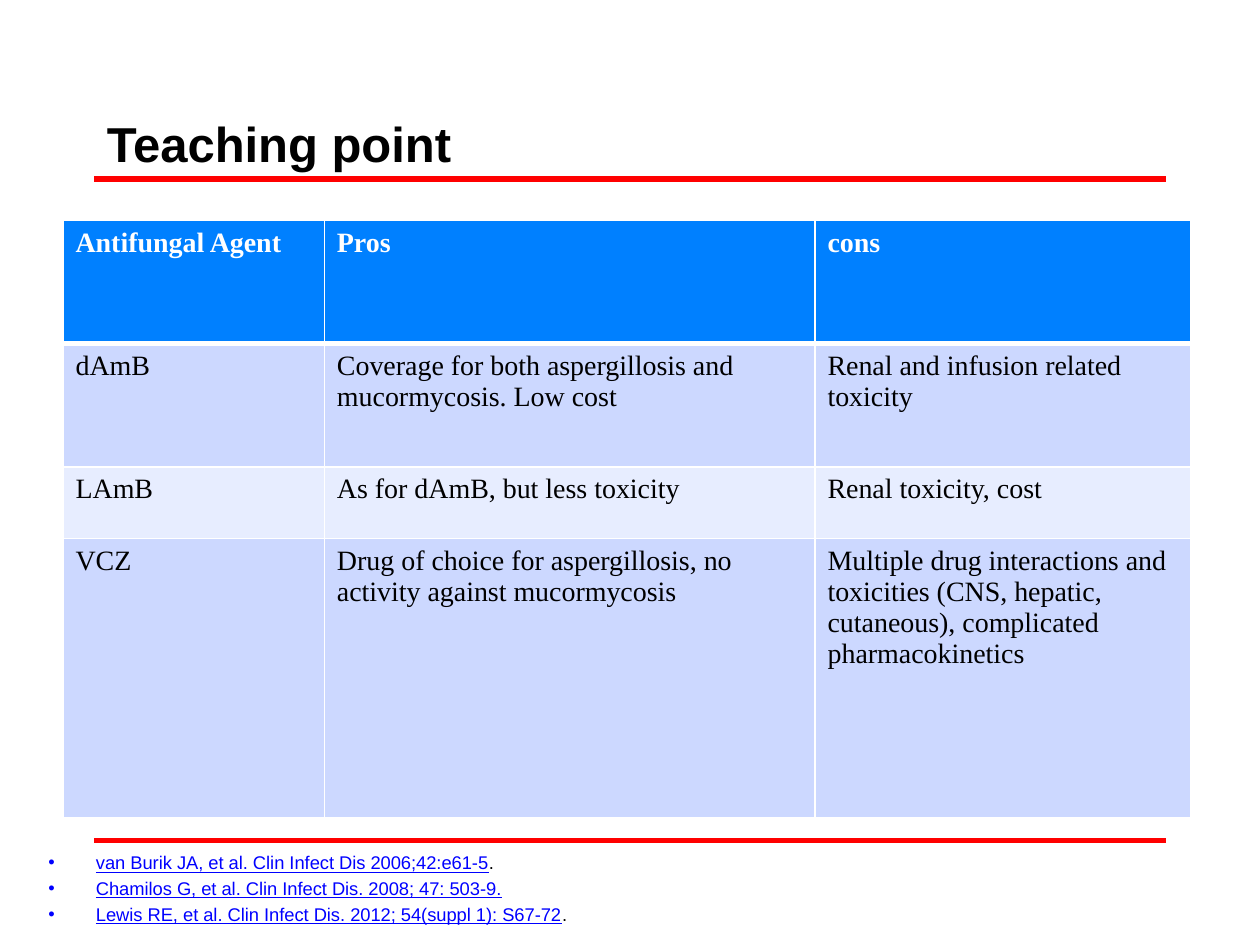
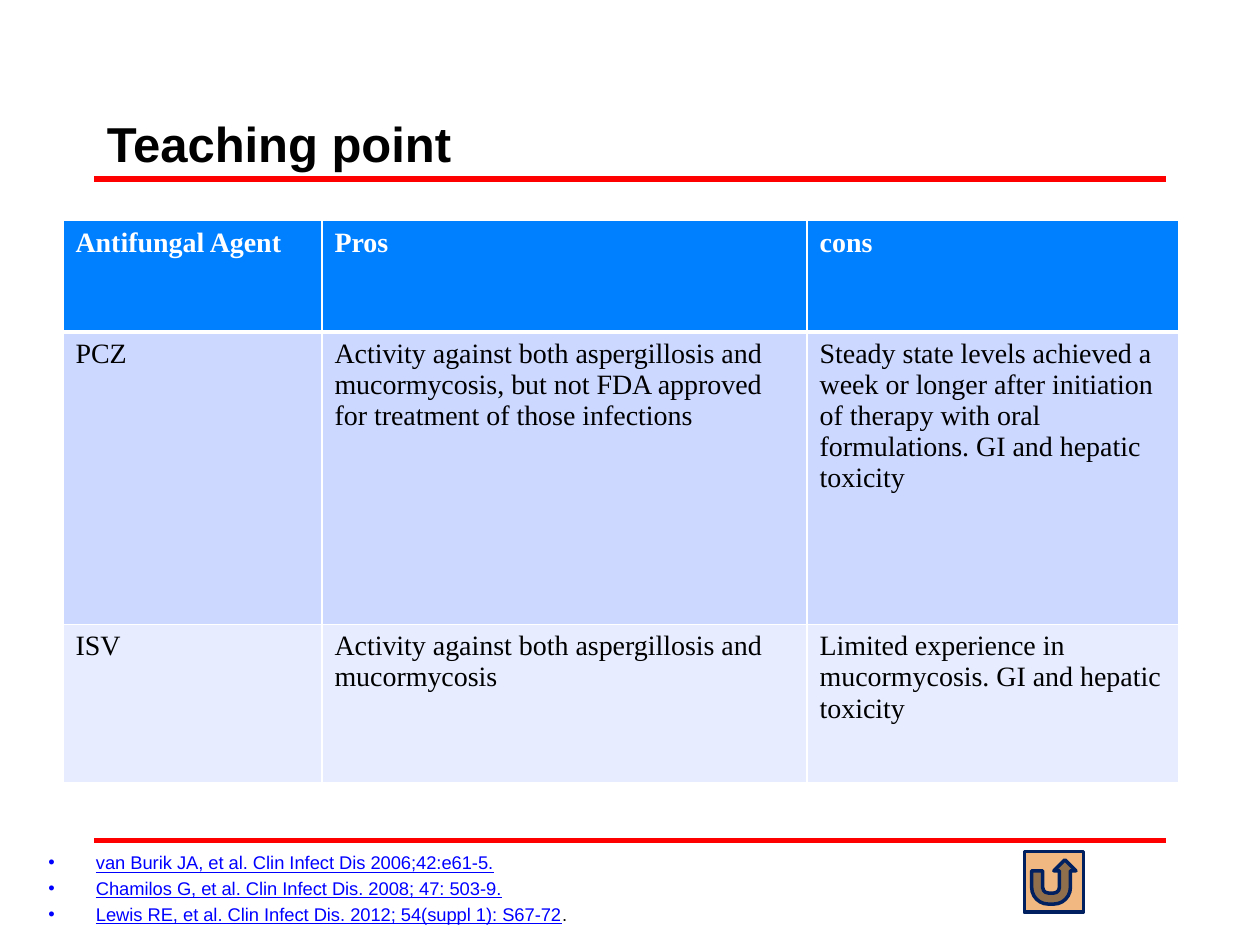
from lxml.etree import SubElement
from pptx import Presentation
from pptx.dml.color import RGBColor
from pptx.enum.shapes import MSO_CONNECTOR, MSO_SHAPE
from pptx.enum.text import MSO_ANCHOR, MSO_AUTO_SIZE, PP_ALIGN
from pptx.oxml.ns import qn
from pptx.util import Cm, Pt

# Shared look
RED, BLACK, WHITE, LINK_BLUE = "FF0000", "000000", "FFFFFF", "0000FF"
HEADER_BLUE, BANDS = "0080FF", ("CCD8FF", "E7EDFF")
HEADING_FONT, TABLE_FONT = "Arial", "Times New Roman"
RULE_LEFT, RULE_RIGHT, RULE_HEIGHTS = 1.9, 23.5, (3.61, 16.94)
TABLE_LEFT, TABLE_TOP = 1.27, 4.45
REFERENCE_INDENT = Cm(0.96)

# Content
HEADER = ("Antifungal Agent", "Pros", "cons")
FIRST_AGENTS = [
    ("dAmB", "Coverage for both aspergillosis and mucormycosis. Low cost",
     "Renal and infusion related toxicity"),
    ("LAmB", "As for dAmB, but less toxicity", "Renal toxicity, cost"),
    ("VCZ", "Drug of choice for aspergillosis, no activity against mucormycosis",
     "Multiple drug interactions and toxicities (CNS, hepatic, cutaneous), "
     "complicated pharmacokinetics"),
]
SECOND_AGENTS = [
    ("PCZ", "Activity against both aspergillosis and mucormycosis, but not FDA "
     "approved for treatment of those infections",
     "Steady state levels achieved a week or longer after initiation of therapy "
     "with oral formulations. GI and hepatic toxicity"),
    ("ISV", "Activity against both aspergillosis and mucormycosis",
     "Limited experience in mucormycosis. GI and hepatic toxicity"),
]
BURIK = "van Burik JA, et al. Clin Infect Dis 2006;42:e61-5"
CHAMILOS = "Chamilos G, et al. Clin Infect Dis. 2008; 47: 503-9."
LEWIS = "Lewis RE, et al. Clin Infect Dis. 2012; 54(suppl 1): S67-72"


def color(hex_code):
    return RGBColor.from_string(hex_code)


def style_font(font, name, size, hex_code, bold=False, underline=False):
    font.name, font.size = name, Pt(size)
    font.bold, font.underline = bold, underline
    font.color.rgb = color(hex_code)


def place(shape, left, top, width, height):
    shape.left, shape.top = Cm(left), Cm(top)
    shape.width, shape.height = Cm(width), Cm(height)


def add_rule(slide, height):
    rule = slide.shapes.add_connector(
        MSO_CONNECTOR.STRAIGHT, Cm(RULE_LEFT), Cm(height), Cm(RULE_RIGHT), Cm(height))
    rule.line.color.rgb = color(RED)
    rule.line.width = Pt(3)
    SubElement(rule._element.spPr, qn("a:effectLst"))


def set_title(slide, text):
    title = slide.shapes.title
    place(title, 1.9, 1.07, 21.6, 2.54)
    frame = title.text_frame
    frame.text = text
    frame.vertical_anchor = MSO_ANCHOR.BOTTOM
    frame.auto_size = MSO_AUTO_SIZE.NONE
    heading = frame.paragraphs[0]
    heading.alignment = PP_ALIGN.LEFT
    style_font(heading.font, HEADING_FONT, 28, BLACK, bold=True)


def set_borders(cell, top, bottom):
    """White cell borders; the schema wants them ahead of the fill."""
    properties = cell._tc.get_or_add_tcPr()
    widths = (("a:lnL", 1), ("a:lnR", 1), ("a:lnT", top), ("a:lnB", bottom))
    for position, (side, width) in enumerate(widths):
        border = SubElement(properties, qn(side), w=str(Pt(width)))
        fill = SubElement(border, qn("a:solidFill"))
        SubElement(fill, qn("a:srgbClr"), val=WHITE)
        properties.insert(position, border)


def add_agent_table(slide, agents, column_widths, row_heights):
    rows = [HEADER, *agents]
    table = slide.shapes.add_table(
        len(rows), len(HEADER), Cm(TABLE_LEFT), Cm(TABLE_TOP),
        Cm(sum(column_widths)), Cm(sum(row_heights))).table
    for column, width in zip(table.columns, column_widths):
        column.width = Cm(width)
    for r, (row, height) in enumerate(zip(rows, row_heights)):
        table.rows[r].height = Cm(height)
        is_header = r == 0
        background = HEADER_BLUE if is_header else BANDS[(r - 1) % 2]
        for c, text in enumerate(row):
            cell = table.cell(r, c)
            cell.text = text
            cell.fill.solid()
            cell.fill.fore_color.rgb = color(background)
            style_font(cell.text_frame.paragraphs[0].font, TABLE_FONT, 16,
                       WHITE if is_header else BLACK, bold=is_header)
            set_borders(cell, top=3 if r == 1 else 1, bottom=3 if is_header else 1)


def add_bullet(paragraph):
    properties = paragraph._p.get_or_add_pPr()
    properties.set("marL", str(REFERENCE_INDENT))
    properties.set("indent", str(-REFERENCE_INDENT))
    SubElement(properties, qn("a:buFont"), typeface=HEADING_FONT)
    SubElement(properties, qn("a:buChar"), char="•")


def set_references(slide, references):
    """Each reference is a citation and the plain text that follows it."""
    body = slide.placeholders[1]
    place(body, 0.72, 17.04, 19.43, 1.78)
    frame = body.text_frame
    frame.auto_size = MSO_AUTO_SIZE.NONE
    for i, (citation, ending) in enumerate(references):
        paragraph = frame.add_paragraph() if i else frame.paragraphs[0]
        paragraph.space_before = Pt(2.1)
        add_bullet(paragraph)
        run = paragraph.add_run()
        run.text = citation
        if ending:
            style_font(run.font, HEADING_FONT, 10.5, LINK_BLUE, underline=True)
            tail = paragraph.add_run()
            tail.text = ending
            style_font(tail.font, HEADING_FONT, 10.5, BLACK)
        else:
            style_font(paragraph.font, HEADING_FONT, 10.5, LINK_BLUE, underline=True)


def add_return_button(slide):
    button = slide.shapes.add_shape(
        MSO_SHAPE.ACTION_BUTTON_RETURN, Cm(20.65), Cm(17.17), Cm(1.19), Cm(1.22))
    button.shadow.inherit = False
    button.fill.solid()
    button.fill.fore_color.rgb = color("F1B981")
    button.line.color.rgb = color("002060")
    button.line.width = Pt(2)


def add_teaching_slide(deck, agents, column_widths, row_heights, references):
    slide = deck.slides.add_slide(deck.slide_layouts[1])
    for height in RULE_HEIGHTS:
        add_rule(slide, height)
    set_title(slide, "Teaching point")
    add_agent_table(slide, agents, column_widths, row_heights)
    set_references(slide, references)
    return slide


def main():
    deck = Presentation()
    deck.slide_width, deck.slide_height = Cm(25.4), Cm(19.05)

    # First table slide
    add_teaching_slide(deck, FIRST_AGENTS, (5.27, 9.89, 7.57), (2.48, 2.48, 1.45, 5.62),
                       [(BURIK, "."), (CHAMILOS, ""), (LEWIS, ".")])

    # Second table slide, with the return button
    second_slide = add_teaching_slide(
        deck, SECOND_AGENTS, (5.22, 9.78, 7.5), (2.24, 5.9, 3.18),
        [(BURIK + ".", ""), (CHAMILOS, ""), (LEWIS, ".")])
    add_return_button(second_slide)

    deck.save("out.pptx")


if __name__ == "__main__":
    main()
